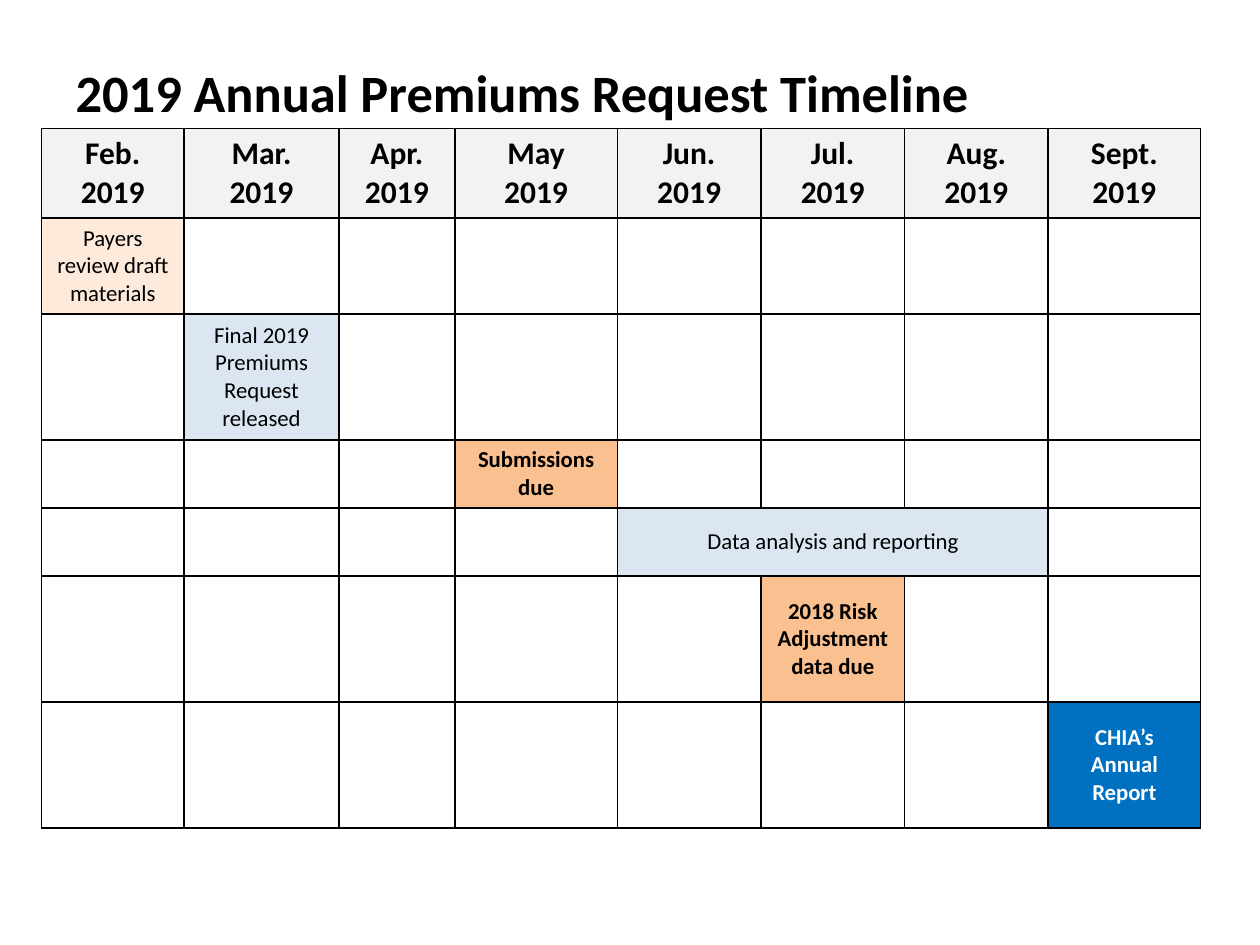
from dataclasses import dataclass

from lxml import etree
from pptx import Presentation
from pptx.dml.color import RGBColor
from pptx.enum.text import MSO_ANCHOR, PP_ALIGN
from pptx.oxml.ns import qn
from pptx.util import Inches, Pt

MIDDLE = MSO_ANCHOR.MIDDLE
LEFT, CENTER = PP_ALIGN.LEFT, PP_ALIGN.CENTER
TITLE_ONLY = 5


@dataclass(frozen=True)
class Theme:
    font: str = "Calibri"
    black: str = "000000"
    white: str = "FFFFFF"
    header: str = "F2F2F2"
    draft: str = "FDEADA"
    work: str = "DCE6F2"
    due: str = "FAC090"
    report: str = "0070C0"
    title_size: int = 30
    header_size: int = 18
    body_size: int = 13
    border_width: int = 1


THEME = Theme()

MONTHS = ["Feb. 2019", "Mar. 2019", "Apr. 2019", "May\n2019",
          "Jun. 2019", "Jul.\n2019", "Aug. 2019", "Sept. 2019"]
COLUMN_WIDTHS = [1.13, 1.23, 0.92, 1.29, 1.14, 1.14, 1.14, 1.21]
ROW_HEIGHTS = [0.67, 0.74, 1, 0.51, 0.54, 1, 1]

# One milestone per row: first month column, months spanned, text, fill, bold, text colour
MILESTONES = [
    (0, 1, "Payers review draft materials", THEME.draft, False, THEME.black),
    (1, 1, "Final 2019 Premiums Request\nreleased", THEME.work, False, THEME.black),
    (3, 1, "Submissions due", THEME.due, True, THEME.black),
    (4, 3, "Data analysis and reporting", THEME.work, False, THEME.black),
    (5, 1, "2018 Risk Adjustment data due", THEME.due, True, THEME.black),
    (7, 1, "CHIA’s Annual Report", THEME.report, True, THEME.white),
]


class SlideBuilder:
    def __init__(self, slide, theme):
        self.slide = slide
        self.theme = theme

    def fill_text(self, frame, text, size, color, bold, align):
        frame.text = text
        font_format = {"name": self.theme.font, "size": Pt(size), "bold": bold}
        for paragraph in frame.paragraphs:
            paragraph.alignment = align
            for run in paragraph.runs:
                for attribute, value in font_format.items():
                    setattr(run.font, attribute, value)
                run.font.color.rgb = RGBColor.from_string(color)

    def title(self, text, left, top, width, height):
        heading = self.slide.shapes.title
        box = {"left": left, "top": top, "width": width, "height": height}
        for attribute, value in box.items():
            setattr(heading, attribute, Inches(value))
        heading.text_frame.vertical_anchor = MIDDLE
        self.fill_text(heading.text_frame, text, self.theme.title_size,
                       self.theme.black, True, LEFT)

    def grid(self, left, top, widths, heights):
        """Add an unfilled table with a border round every cell."""
        table = self.slide.shapes.add_table(
            len(heights), len(widths), Inches(left), Inches(top),
            Inches(sum(widths)), Inches(sum(heights))).table
        table.first_row = table.horz_banding = False
        for column, width in zip(table.columns, widths):
            column.width = Inches(width)
        for row, height in zip(table.rows, heights):
            row.height = Inches(height)
        for cell in table.iter_cells():
            self.border(cell)
            cell.fill.background()
        return table

    def border(self, cell):
        properties = cell._tc.get_or_add_tcPr()
        for side in ("a:lnL", "a:lnR", "a:lnT", "a:lnB"):
            line = etree.SubElement(properties, qn(side),
                                    w=str(Pt(self.theme.border_width)))
            fill = etree.SubElement(line, qn("a:solidFill"))
            etree.SubElement(fill, qn("a:srgbClr"), val=self.theme.black)

    def cell(self, cell, text, fill, size, bold, color):
        cell.fill.solid()
        cell.fill.fore_color.rgb = RGBColor.from_string(fill)
        cell.vertical_anchor = MIDDLE
        self.fill_text(cell.text_frame, text, size, color, bold, CENTER)


def main():
    presentation = Presentation()
    presentation.slide_width = Inches(10)
    presentation.slide_height = Inches(7.5)
    slide = presentation.slides.add_slide(presentation.slide_layouts[TITLE_ONLY])
    builder = SlideBuilder(slide, THEME)

    builder.title("2019 Annual Premiums Request Timeline", 0.5, 0.42, 8.5, 0.61)
    timeline = builder.grid(0.33, 1.02, COLUMN_WIDTHS, ROW_HEIGHTS)
    for column, month in enumerate(MONTHS):
        builder.cell(timeline.cell(0, column), month, THEME.header,
                     THEME.header_size, True, THEME.black)
    for row, (start, span, text, fill, bold, color) in enumerate(MILESTONES, 1):
        milestone = timeline.cell(row, start)
        if span > 1:
            milestone.merge(timeline.cell(row, start + span - 1))
        builder.cell(milestone, text, fill, THEME.body_size, bold, color)

    presentation.save("out.pptx")


if __name__ == "__main__":
    main()
